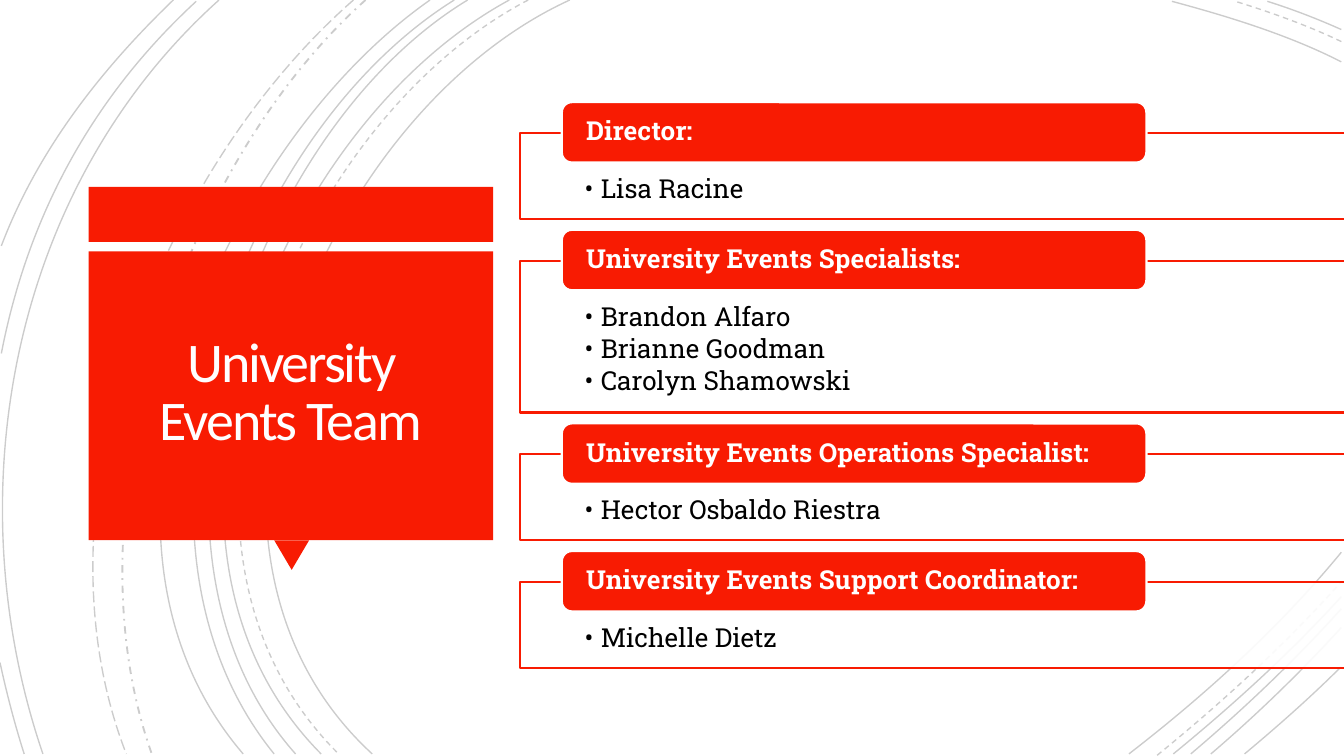
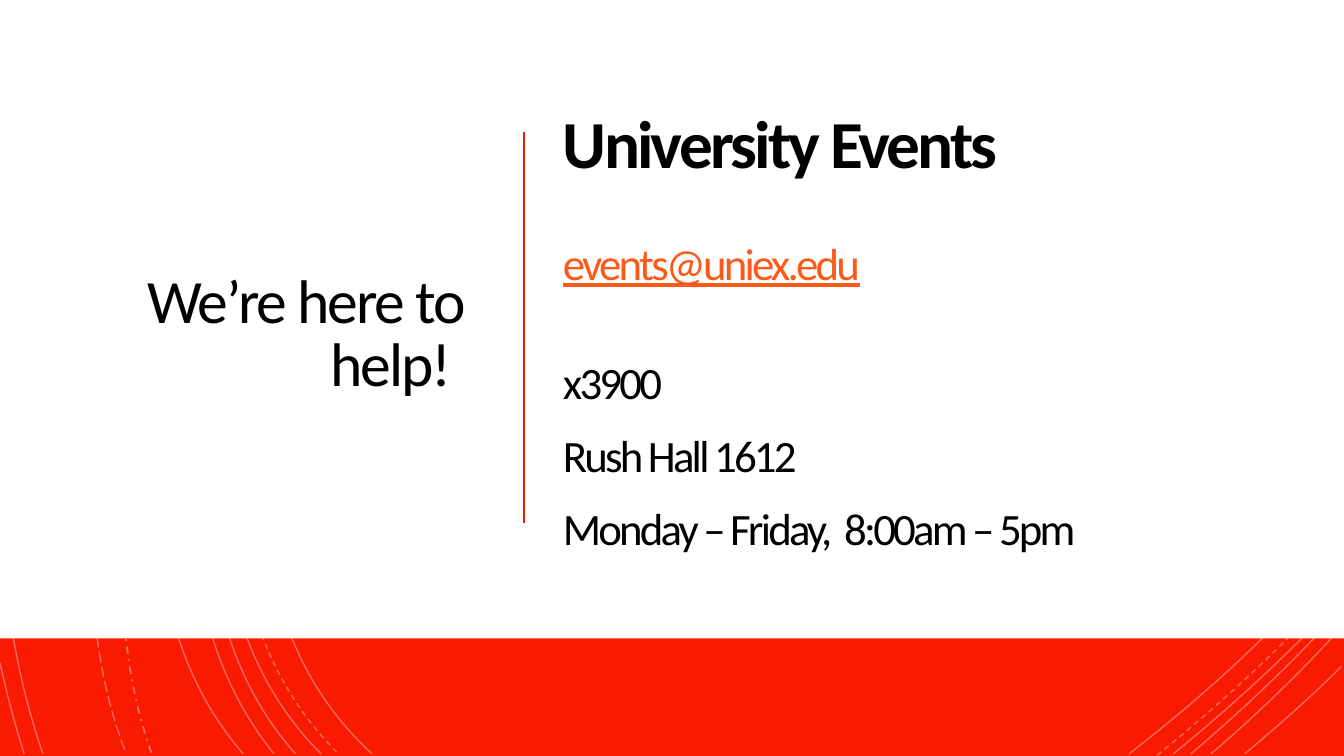
from dataclasses import dataclass
from typing import Any, NamedTuple, Optional

from lxml.etree import SubElement
from pptx import Presentation
from pptx.dml.color import RGBColor
from pptx.enum.dml import MSO_LINE_DASH_STYLE as Dash
from pptx.enum.shapes import MSO_CONNECTOR, MSO_SHAPE as Preset
from pptx.enum.text import MSO_ANCHOR as Anchor, MSO_AUTO_SIZE, PP_ALIGN as Align
from pptx.oxml.ns import qn
from pptx.util import Pt

PX = 9144  # EMU per px, 100 px to the inch
SLIDE_W = 1000
SLIDE_H = SLIDE_W * 9 / 16

RED = RGBColor(0xF8, 0x1B, 0x02)
RULE_RED = RGBColor(0xED, 0x1A, 0x02)
LINK_ORANGE = RGBColor(0xFC, 0x5A, 0x1A)
WHITE = RGBColor(0xFF, 0xFF, 0xFF)
TITLE_WHITE = RGBColor(0xFF, 0xFE, 0xFF)
BLACK = RGBColor(0, 0, 0)

SANS, SLAB = "Calibri", "Roboto Slab"
TITLE_TRACKING, CONTACT_TRACKING = -110, -150

CARD_LEFT, CARD_WIDTH, CARD_TOP, CARD_GAP = 387, 622, 99, 31
CARD_BASE, CARD_LINE = 64, 24.5
HEADER_LEFT, HEADER_WIDTH, HEADER_HEIGHT, HEADER_RISE = 418, 435, 45, 23


class Box(NamedTuple):
    left: float
    top: float
    width: float
    height: float


class Arc(NamedTuple):
    """A cubic curve: start, two control points, end."""
    start: tuple[int, int]
    leave: tuple[int, int]
    arrive: tuple[int, int]
    end: tuple[int, int]
    dash: Dash = Dash.SOLID
    weight: float = 0.75


class Role(NamedTuple):
    heading: str
    people: tuple[str, ...]


@dataclass(frozen=True)
class ContactLine:
    text: str
    size: int = 24
    bold: bool = False
    underline: bool = False
    color: RGBColor = BLACK
    space_before: float = 7.5


ARCS = (
    Arc((424, 0), (236, 86), (107, 405), (277, 561)),
    Arc((998, 46), (959, 26), (913, 12), (872, 1)),
    Arc((840, 561), (897, 517), (952, 467), (998, 411)),
    Arc((393, 0), (213, 94), (92, 403), (252, 561), Dash.DASH),
    Arc((998, 31), (973, 19), (945, 9), (919, 1), Dash.DASH),
    Arc((861, 562), (909, 523), (956, 480), (998, 433), Dash.DASH),
    Arc((379, 0), (202, 96), (82, 403), (239, 561)),
    Arc((998, 22), (980, 14), (962, 7), (943, 1)),
    Arc((873, 561), (917, 525), (960, 486), (998, 444)),
    Arc((348, 0), (183, 100), (82, 406), (220, 561)),
    Arc((886, 561), (925, 528), (963, 492), (998, 453)),
    Arc((338, 0), (173, 103), (73, 400), (204, 561)),
    Arc((901, 561), (935, 532), (968, 500), (998, 467)),
    Arc((320, 0), (163, 110), (40, 397), (181, 561)),
    Arc((926, 561), (950, 541), (975, 519), (998, 496)),
    Arc((272, 0), (132, 125), (49, 382), (113, 561), Dash.DASH_DOT, 1),
    Arc((263, 0), (118, 127), (21, 374), (94, 561), Dash.LONG_DASH),
    Arc((163, 0), (8, 139), (-34, 368), (32, 561)),
    Arc((146, 1), (69, 72), (21, 160), (1, 263)),
    Arc((0, 493), (5, 516), (11, 539), (18, 561)),
    Arc((129, 0), (75, 52), (28, 112), (1, 183)),
)

TEAM = (
    Role("Director:", ("Lisa Racine",)),
    Role("University Events Specialists:",
         ("Brandon Alfaro", "Brianne Goodman", "Carolyn Shamowski")),
    Role("University Events Operations Specialist:", ("Hector Osbaldo Riestra",)),
    Role("University Events Support Coordinator:", ("Michelle Dietz",)),
)

CONTACT = (
    ContactLine("University Events", size=36, bold=True),
    ContactLine("events@uniex.edu", underline=True, color=LINK_ORANGE, space_before=25.7),
    ContactLine("x3900", space_before=32),
    ContactLine("Rush Hall 1612"),
    ContactLine("Monday – Friday,  8:00am – 5pm"),
)


def px(length: float) -> int:
    return round(length * PX)


def apply(target: Any, values: dict[str, Any]) -> None:
    for name, value in values.items():
        setattr(target, name, value)


def set_alpha(fill_parent: Any, percent: int) -> None:
    color = fill_parent.find(qn("a:solidFill"))[0]
    SubElement(color, qn("a:alpha")).set("val", str(percent * 1000))


def insets(left: int, top: int, right: int, bottom: int) -> dict[str, int]:
    return {"margin_left": px(left), "margin_top": px(top),
            "margin_right": px(right), "margin_bottom": px(bottom)}


def add_preset(slide: Any, preset: Preset, box: Box, fill: RGBColor,
               outline: Optional[RGBColor] = None) -> Any:
    shape = slide.shapes.add_shape(preset, *map(px, box))
    shape.shadow.inherit = False
    shape.fill.solid()
    shape.fill.fore_color.rgb = fill
    if outline is None:
        shape.line.fill.background()
    else:
        shape.line.color.rgb = outline
        shape.line.width = Pt(1.25)
    return shape


def write(paragraph: Any, text: str, color: RGBColor, paragraph_format: dict[str, Any],
          font: dict[str, Any], tracking: int = 0) -> None:
    apply(paragraph, paragraph_format)
    run = paragraph.add_run()
    run.text = text
    apply(run.font, font)
    run.font.color.rgb = color
    if tracking:
        run.font._element.set("spc", str(tracking))


def paragraphs(frame: Any, count: int) -> list[Any]:
    return [frame.paragraphs[0]] + [frame.add_paragraph() for _ in range(count - 1)]


def add_arcs(slide: Any, color: RGBColor, opacity: int) -> None:
    for arc in ARCS:
        builder = slide.shapes.build_freeform(*arc.start, scale=PX)
        builder.add_line_segments([arc.leave, arc.arrive, arc.end], close=False)
        curve = builder.convert_to_shape()
        path = curve.element.find(".//" + qn("a:path"))
        segments = path.findall(qn("a:lnTo"))
        cubic = SubElement(path, qn("a:cubicBezTo"))
        for segment in segments:
            cubic.append(segment[0])
            path.remove(segment)
        curve.shadow.inherit = False
        curve.fill.background()
        curve.line.color.rgb = color
        apply(curve.line, {"width": Pt(arc.weight), "dash_style": arc.dash})
        set_alpha(curve.element.spPr.find(qn("a:ln")), opacity)


def place_title(slide: Any, text: str, box: Box, size: int, color: RGBColor,
                align: Align) -> None:
    """Format the title placeholder and bring it in front of what is drawn so far."""
    title = slide.shapes.title
    apply(title, dict(zip(("left", "top", "width", "height"), map(px, box))))
    apply(title.text_frame, {"vertical_anchor": Anchor.MIDDLE, "word_wrap": True,
                             "auto_size": MSO_AUTO_SIZE.NONE, **insets(25, 25, 25, 25)})
    write(title.text_frame.paragraphs[0], text, color,
          {"alignment": align, "line_spacing": 0.85},
          {"name": SANS, "size": Pt(size)}, TITLE_TRACKING)
    title.element.getparent().append(title.element)


def add_bullet(paragraph: Any) -> None:
    properties = paragraph._p.get_or_add_pPr()
    properties.set("marL", str(px(12)))
    properties.set("indent", str(px(-12)))
    SubElement(properties, qn("a:buFont")).set("typeface", SLAB)
    SubElement(properties, qn("a:buChar")).set("char", "•")


def add_role(slide: Any, role: Role, top: int, height: int) -> None:
    card = add_preset(slide, Preset.RECTANGLE, Box(CARD_LEFT, top, CARD_WIDTH, height),
                      WHITE, RED)
    set_alpha(card.element.spPr, 90)
    apply(card.text_frame, {"vertical_anchor": Anchor.TOP, "word_wrap": True,
                            **insets(48, 32, 48, 11)})
    for paragraph, person in zip(paragraphs(card.text_frame, len(role.people)), role.people):
        write(paragraph, person, BLACK,
              {"alignment": Align.LEFT, "level": 1, "line_spacing": 0.9,
               "space_after": Pt(2.1)},
              {"name": SLAB, "size": Pt(14)})
        add_bullet(paragraph)

    header = add_preset(slide, Preset.ROUNDED_RECTANGLE,
                        Box(HEADER_LEFT, top - HEADER_RISE, HEADER_WIDTH, HEADER_HEIGHT),
                        RED, WHITE)
    apply(header.text_frame, {"vertical_anchor": Anchor.MIDDLE, "word_wrap": True,
                              **insets(16, 2, 16, 2)})
    write(header.text_frame.paragraphs[0], role.heading, WHITE,
          {"alignment": Align.LEFT, "line_spacing": 0.9},
          {"name": SLAB, "size": Pt(14), "bold": True})


def build_team(slide: Any) -> None:
    add_arcs(slide, BLACK, 20)
    add_preset(slide, Preset.RECTANGLE, Box(66, 139, 301, 41), RED)
    pointer = add_preset(slide, Preset.ISOSCELES_TRIANGLE, Box(204, 402, 26, 22), RED)
    pointer.rotation = 180
    add_preset(slide, Preset.RECTANGLE, Box(66, 187, 301, 215), RED)
    place_title(slide, "University Events Team", Box(73, 193, 287, 201), 30,
                TITLE_WHITE, Align.CENTER)
    top = CARD_TOP
    for role in TEAM:
        height = round(CARD_BASE + CARD_LINE * (len(role.people) - 1))
        add_role(slide, role, top, height)
        top += height + CARD_GAP


def build_contact(slide: Any) -> None:
    add_arcs(slide, BLACK, 20)
    add_preset(slide, Preset.RECTANGLE, Box(0, 0, SLIDE_W, SLIDE_H), RED)
    add_arcs(slide, WHITE, 35)
    add_preset(slide, Preset.RECTANGLE, Box(0, 0, SLIDE_W, 475), WHITE)
    place_title(slide, "We’re here to help! ", Box(53, 79, 317, 342), 33,
                BLACK, Align.RIGHT)

    divider = slide.shapes.add_connector(MSO_CONNECTOR.STRAIGHT,
                                         *map(px, (390, 98, 390, 389)))
    divider.line.color.rgb = RULE_RED
    divider.line.width = Pt(1)
    SubElement(divider.element.spPr, qn("a:effectLst"))

    details = slide.shapes.add_textbox(*map(px, Box(409, 61, 535, 360))).text_frame
    apply(details, {"word_wrap": True, "vertical_anchor": Anchor.MIDDLE})
    for paragraph, line in zip(paragraphs(details, len(CONTACT)), CONTACT):
        write(paragraph, line.text, line.color,
              {"line_spacing": 1.1, "space_before": Pt(line.space_before)},
              {"name": SANS, "size": Pt(line.size), "bold": line.bold,
               "underline": line.underline}, CONTACT_TRACKING)


def main() -> None:
    deck = Presentation()
    apply(deck, {"slide_width": px(SLIDE_W), "slide_height": px(SLIDE_H)})
    title_only = deck.slide_layouts[5]
    for build in (build_team, build_contact):
        build(deck.slides.add_slide(title_only))
    deck.save("out.pptx")


if __name__ == "__main__":
    main()
